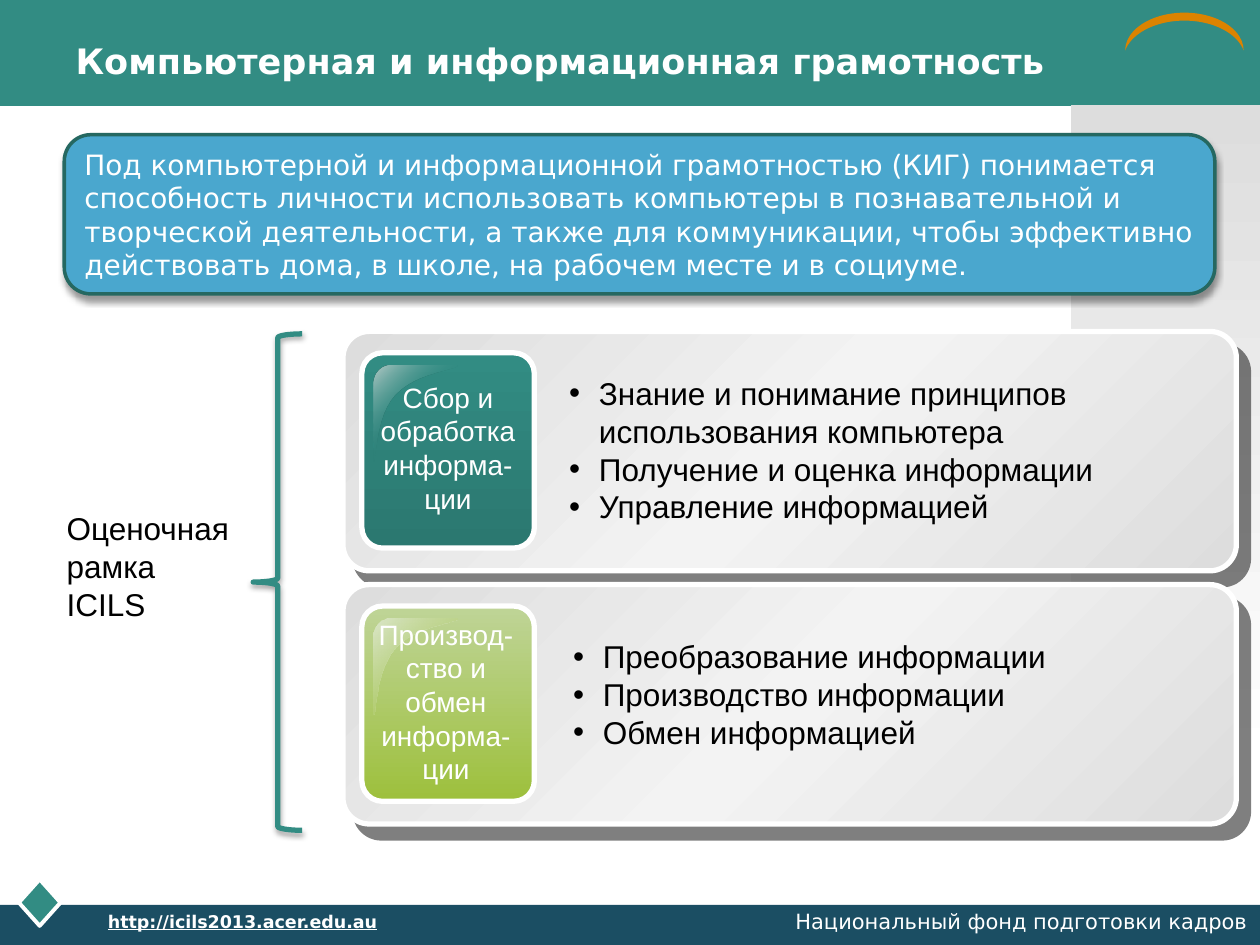
from pptx import Presentation
from pptx.dml.color import RGBColor
from pptx.enum.shapes import MSO_SHAPE as Shape
from pptx.enum.text import MSO_ANCHOR as Anchor, PP_ALIGN as Align
from pptx.oxml import parse_xml
from pptx.oxml.ns import nsdecls
from pptx.util import Pt

WHITE = RGBColor(0xFF, 0xFF, 0xFF)
BLACK = RGBColor(0, 0, 0)
TEAL = RGBColor(0x32, 0x8C, 0x83)
MID_TEAL = RGBColor(0x2B, 0x78, 0x70)
DARK_TEAL = RGBColor(0x25, 0x68, 0x61)
PALE_TEAL = RGBColor(0xB7, 0xCB, 0xC8)
NAVY = RGBColor(0x1B, 0x4E, 0x63)
ORANGE = RGBColor(0xDC, 0x83, 0x00)
BLUE = RGBColor(0x4A, 0xA7, 0xCE)
GREY = RGBColor(0xDD, 0xDD, 0xDD)
LIGHT_GREY = RGBColor(0xF3, 0xF3, 0xF3)
LIME = RGBColor(0x9D, 0xC0, 0x3C)
SOFT_LIME = RGBColor(0xBF, 0xD4, 0x97)
PALE_LIME = RGBColor(0xDC, 0xE7, 0xCB)


def paint(shape, stops, angle=0, line=None, width=0):
    shape.shadow.inherit = False
    if len(stops) == 1:
        shape.fill.solid()
        shape.fill.fore_color.rgb = stops[0][1]
    else:
        shape.fill.background()
    if len(stops) > 1:
        marks = "".join(
            f'<a:gs pos="{at * 1000}"><a:srgbClr val="{color}">'
            f'<a:alpha val="{alpha * 1000}"/></a:srgbClr></a:gs>'
            for at, color, alpha in stops
        )
        properties = shape._element.spPr
        properties.replace(properties.find("{*}noFill"), parse_xml(
            f'<a:gradFill {nsdecls("a")} rotWithShape="1"><a:gsLst>{marks}</a:gsLst>'
            f'<a:lin ang="{angle * 60000}" scaled="0"/></a:gradFill>'
        ))
    if line is None:
        shape.line.fill.background()
    else:
        shape.line.color.rgb = line
        shape.line.width = Pt(width)


def write(box, lines, size, name, color, align=Align.LEFT, bullets=False, bold=None):
    frame = box.text_frame
    frame.word_wrap = True
    frame.text = "\n".join(lines)
    for para in frame.paragraphs:
        para.alignment = align
        if bullets:
            settings = para._p.get_or_add_pPr()
            settings.set("marL", str(Pt(17)))
            settings.set("indent", str(Pt(-17)))
            settings.append(parse_xml(f'<a:buFont {nsdecls("a")} typeface="Arial"/>'))
            settings.append(parse_xml(f'<a:buChar {nsdecls("a")} char="•"/>'))
        para.font.size = Pt(size)
        para.font.name = name
        para.font.color.rgb = color
        para.font.bold = bold


deck = Presentation()
deck.slide_width, deck.slide_height = Pt(720), Pt(540)
slide = deck.slides.add_slide(deck.slide_layouts[5])
shapes = slide.shapes

for kind, left, top, width, height, color in (
    (Shape.RECTANGLE, 0, 0, 720, 60.5, TEAL),
    (Shape.RECTANGLE, 0, 517, 720, 23, NAVY),
    (Shape.DIAMOND, 10.8, 502.5, 23.8, 26.6, TEAL),
    (Shape.MOON, 666, -15.8, 21.6, 67.7, ORANGE),
    (Shape.RECTANGLE, 612, 60, 108, 378, GREY),
):
    decor = shapes.add_shape(kind, Pt(left), Pt(top), Pt(width), Pt(height))
    paint(decor, [(0, color, 100)])
    if kind == Shape.DIAMOND:
        paint(decor, [(0, color, 100)], line=WHITE, width=2.25)
    elif kind == Shape.MOON:
        decor.rotation = 90
        decor.adjustments[0] = 0.21
    elif color == GREY:
        paint(decor, [(0, GREY, 100), (100, WHITE, 100)], 90)

callout = shapes.add_shape(Shape.ROUNDED_RECTANGLE, Pt(36.7), Pt(77), Pt(657.5), Pt(91))
paint(callout, [(0, BLUE, 100)], line=DARK_TEAL, width=2)
callout.text_frame.vertical_anchor = Anchor.MIDDLE
write(callout, [
    "Под компьютерной и информационной грамотностью (КИГ) понимается способность "
    "личности использовать компьютеры в познавательной и творческой деятельности, "
    "а также для коммуникации, чтобы эффективно действовать дома, в школе, "
    "на рабочем месте и в социуме."
], 16, "DejaVu Sans", WHITE)

title = shapes.title
title.left, title.top, title.width, title.height = Pt(36), Pt(12.5), Pt(648), Pt(44.5)
title.text_frame.vertical_anchor = Anchor.MIDDLE
write(title, ["Компьютерная и информационная грамотность"], 20, "DejaVu Sans", WHITE, bold=True)
shapes._spTree.append(title._element)

address = shapes.add_textbox(Pt(30), Pt(517), Pt(192.5), Pt(17))
write(address, ["http://icils2013.acer.edu.au"], 10, "DejaVu Sans", WHITE, Align.RIGHT, bold=True)
address.text_frame.paragraphs[0].font.underline = True
owner = shapes.add_textbox(Pt(435.6), Pt(515.5), Pt(284.4), Pt(19))
write(owner, ["Национальный фонд подготовки кадров"], 12, "DejaVu Sans", WHITE, Align.RIGHT)

shadows = [(callout, 40, 4, 3, 90)]
gloss_curves = (
    ((26.6, 19.4), (21.6, 19.4), (17.3, 24.5), (17.3, 30.2)),
    ((17.3, 74.2), (19.4, 75.6), (18, 48.2), (30.2, 36)),
    ((30.2, 36), (42.5, 23), (66.2, 22.3), (65.5, 19.4)),
)
gloss_points = [
    tuple((1 - t) ** 3 * a + 3 * (1 - t) ** 2 * t * b + 3 * (1 - t) * t ** 2 * c + t ** 3 * d
          for a, b, c, d in zip(*curve))
    for curve in gloss_curves
    for t in (step / 12 for step in range(13))
]
card_left = 196
cards = (
    (189.4, (TEAL, MID_TEAL), [(0, PALE_TEAL, 100), (50, TEAL, 0), (100, PALE_TEAL, 100)],
     ["Сбор и", "обработка", "информа-ции"], (199.5, 213.8, 113, 85),
     ["Знание и понимание принципов использования компьютера",
      "Получение и оценка информации", "Управление информацией"], (318.2, 210.2, 375, 94.3)),
    (334.1, (SOFT_LIME, LIME), [(0, PALE_LIME, 100), (100, LIME, 0)],
     ["Производ-ство и обмен информа-ции"], (206.6, 349.2, 96.5, 104.4),
     ["Преобразование информации", "Производство информации",
      "Обмен информацией"], (320.4, 360.7, 375, 72.7)),
)
for card_top, (upper, lower), gloss_stops, label, label_area, skills, skills_area in cards:
    card = shapes.add_shape(
        Shape.ROUNDED_RECTANGLE, Pt(card_left), Pt(card_top), Pt(510.5), Pt(136.8))
    card.adjustments[0] = 0.11
    paint(card, [(0, GREY, 100), (50, LIGHT_GREY, 100), (100, GREY, 100)], 45, WHITE, 3)
    shadows.append((card, 50, 0, 10.6, 49))

    tile = shapes.add_shape(
        Shape.ROUNDED_RECTANGLE, Pt(card_left + 10.8), Pt(card_top + 12.2), Pt(98.6), Pt(111.6))
    tile.adjustments[0] = 0.12
    paint(tile, [(0, upper, 100), (100, lower, 100)], 90, WHITE, 3)

    outline = [(Pt(card_left + x), Pt(card_top + y)) for x, y in gloss_points]
    builder = shapes.build_freeform(*outline[0])
    builder.add_line_segments(outline[1:], close=True)
    paint(builder.convert_to_shape(), gloss_stops, 45)

    label_box = shapes.add_textbox(*map(Pt, label_area))
    write(label_box, label, 16, "Arial", WHITE, Align.CENTER)
    skills_box = shapes.add_textbox(*map(Pt, skills_area))
    write(skills_box, skills, 18, "Arial", BLACK, bullets=True)

framework = shapes.add_textbox(Pt(31), Pt(287.3), Pt(124.6), Pt(72.7))
write(framework, ["Оценочная рамка", "ICILS"], 18, "Arial", BLACK)

brace = shapes.add_shape(Shape.LEFT_BRACE, Pt(144.7), Pt(190.8), Pt(28), Pt(283.7))
brace.adjustments[0] = 0.08
brace.shadow.inherit = False
brace.fill.background()
brace.line.color.rgb = TEAL
brace.line.width = Pt(3)
shadows.append((brace, 35, 3.1, 1.8, 90))

for shape, alpha, blur, distance, angle in shadows:
    shape._element.spPr.find("{*}effectLst").append(parse_xml(
        f'<a:outerShdw {nsdecls("a")} blurRad="{Pt(blur)}" dist="{Pt(distance)}" '
        f'dir="{angle * 60000}" algn="ctr" rotWithShape="0"><a:srgbClr val="{BLACK}">'
        f'<a:alpha val="{alpha * 1000}"/></a:srgbClr></a:outerShdw>'
    ))

deck.save("out.pptx")
